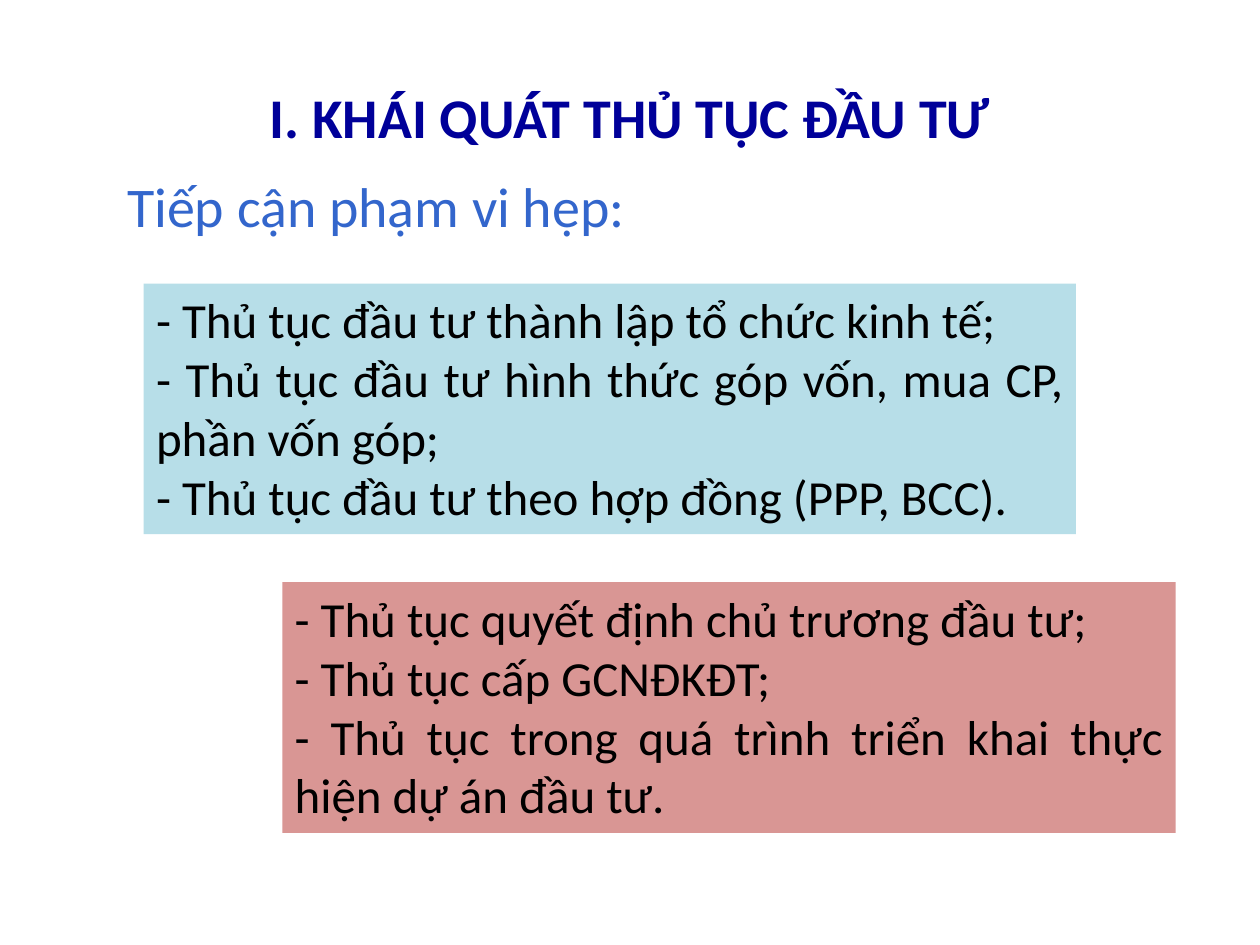
"""Build the slide that outlines investment procedures."""
from dataclasses import dataclass

from pptx import Presentation
from pptx.dml.color import RGBColor
from pptx.enum.shapes import MSO_SHAPE
from pptx.enum.text import MSO_ANCHOR, PP_ALIGN
from pptx.util import Inches, Pt

RECT = MSO_SHAPE.RECTANGLE
TOP, MIDDLE = MSO_ANCHOR.TOP, MSO_ANCHOR.MIDDLE
LEFT, CENTER, JUSTIFY = PP_ALIGN.LEFT, PP_ALIGN.CENTER, PP_ALIGN.JUSTIFY


@dataclass(frozen=True)
class Theme:
    font: str = "Calibri"
    heading_size: int = 32
    body_size: int = 28
    title: str = "000099"
    subtitle: str = "3366CC"
    body: str = "000000"
    forms_fill: str = "B7DEE8"
    steps_fill: str = "D99694"


class SlideBuilder:
    def __init__(self, slide, theme):
        self.s = slide
        self.theme = theme

    def add_lines(self, sp, lines, size, color, align, anchor=TOP, bold=False):
        tf = sp.text_frame
        tf.word_wrap = True
        tf.vertical_anchor = anchor
        for i, line in enumerate(lines):
            p = tf.add_paragraph() if i else tf.paragraphs[0]
            p.alignment = align
            r = p.add_run()
            r.text = line
            r.font.name = self.theme.font
            r.font.size = Pt(size)
            r.font.bold = bold
            r.font.color.rgb = RGBColor.from_string(color)

    def heading(self, box, text, color, align=LEFT, anchor=TOP, bold=False):
        sp = self.s.shapes.add_textbox(*map(Inches, box))
        self.add_lines(sp, [text], self.theme.heading_size, color, align, anchor, bold)

    def panel(self, box, fill, lines):
        sp = self.s.shapes.add_shape(RECT, *map(Inches, box))
        sp.shadow.inherit = False
        sp.fill.solid()
        sp.fill.fore_color.rgb = RGBColor.from_string(fill)
        sp.line.fill.background()
        self.add_lines(sp, lines, self.theme.body_size, self.theme.body, JUSTIFY)


def main():
    prs = Presentation()
    prs.slide_width, prs.slide_height = Inches(10), Inches(7.5)
    theme = Theme()
    slide = SlideBuilder(prs.slides.add_slide(prs.slide_layouts[6]), theme)

    slide.heading((0.5, 0.3, 9, 1.25), "I. KHÁI QUÁT THỦ TỤC ĐẦU TƯ",
                  theme.title, CENTER, MIDDLE, bold=True)
    slide.heading((0.91, 1.31, 8.11, 0.64), "Tiếp cận phạm vi hẹp:", theme.subtitle)
    slide.panel((2.24, 4.62, 7.09, 1.99), theme.steps_fill, [
        "- Thủ tục quyết định chủ trương đầu tư;",
        "- Thủ tục cấp GCNĐKĐT;",
        "- Thủ tục trong quá trình triển khai thực hiện dự án đầu tư.",
    ])
    slide.panel((1.14, 2.25, 7.4, 1.99), theme.forms_fill, [
        "- Thủ tục đầu tư thành lập tổ chức kinh tế;",
        "- Thủ tục đầu tư hình thức góp vốn, mua CP, phần vốn góp;",
        "- Thủ tục đầu tư theo hợp đồng (PPP, BCC).",
    ])
    prs.save("out.pptx")


if __name__ == "__main__":
    main()
